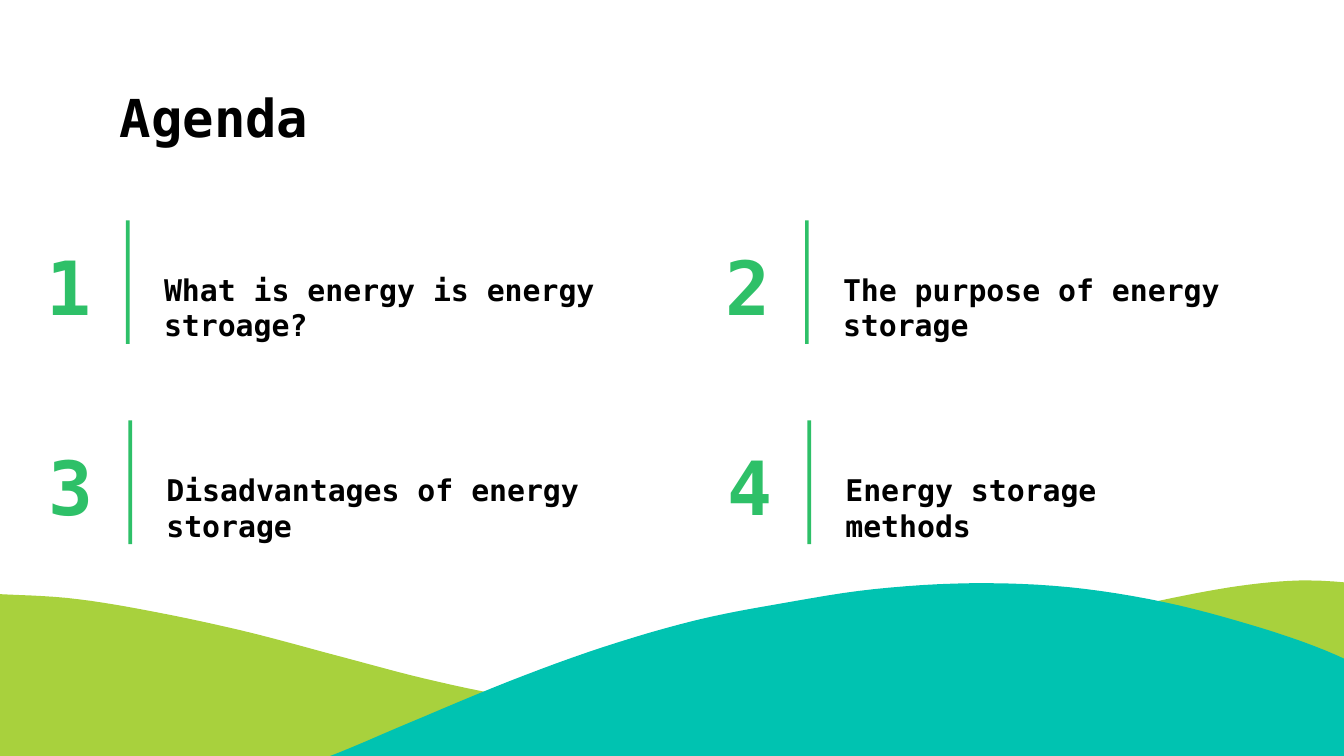
from dataclasses import dataclass

from pptx import Presentation
from pptx.dml.color import RGBColor
from pptx.enum.shapes import MSO_SHAPE
from pptx.enum.text import MSO_ANCHOR, MSO_AUTO_SIZE, PP_ALIGN
from pptx.util import Pt

RECTANGLE = MSO_SHAPE.RECTANGLE
TOP, MIDDLE, BOTTOM = MSO_ANCHOR.TOP, MSO_ANCHOR.MIDDLE, MSO_ANCHOR.BOTTOM
LEFT, RIGHT = PP_ALIGN.LEFT, PP_ALIGN.RIGHT
NO_AUTOFIT = MSO_AUTO_SIZE.NONE


@dataclass(frozen=True)
class Theme:
    font: str = "DejaVu Sans Mono"
    ink: str = "000000"
    green: str = "2EC068"
    lime: str = "A8D13D"
    teal: str = "00C3B1"
    title_size: int = 28
    number_size: int = 40
    topic_size: int = 16


THEME = Theme()
TITLE = "Agenda"
TOPICS = [
    ("What is energy is energy stroage?", 292),
    ("The purpose of energy storage", 263),
    ("Disadvantages of energy storage", 284),
    ("Energy storage methods", 220),
]
HILLS = [
    (THEME.lime, 445.7, [
        (-3, 318.2), (36, 320.4), (74.2, 326.2), (128.9, 337.7), (183.6, 352.1),
        (227.5, 363.6), (272.2, 373), (316.8, 379.4), (355, 380.9), (398.2, 378.7),
        (445, 370.8), (501.1, 356.4), (555.8, 339.8), (596.9, 327.6), (635, 319),
        (669.6, 313.2), (701.3, 311), (741.6, 313.9)]),
    (THEME.teal, 447.8, [
        (0.7, 431.3), (40.3, 434.9), (81.4, 432), (128.9, 421.2), (174.2, 406.1),
        (218.9, 387.4), (272.9, 365), (322.6, 346.9), (373, 332.3), (420.5, 323),
        (468, 315.7), (520.6, 312.5), (572.4, 314.6), (623.5, 322.6),
        (672.5, 335.5), (710, 348.5), (745.2, 365)]),
]

COLUMN_LEFTS = (67.5, 431.25)
FIRST_ROW, ROW_STEP, ROW_SHIFT = 118, 107.25, 1.25
BAR_WIDTH, BAR_HEIGHT = 2, 66.3
NUMBER_OFFSET, NUMBER_WIDTH = -84.2, 72.7
TOPIC_OFFSET, TOPIC_DROP, TOPIC_HEIGHT = 13.3, 20.2, 26.6
CURVE_STEPS = 6


def place(box, left, top, width, height):
    box.left, box.top, box.width, box.height = map(Pt, (left, top, width, height))


def write(box, text, *, size, color, align=LEFT, anchor=TOP, space_after=0):
    frame = box.text_frame
    frame.word_wrap = True
    frame.auto_size = NO_AUTOFIT
    frame.vertical_anchor = anchor
    frame.margin_left = frame.margin_right = Pt(7.2)
    frame.margin_top = frame.margin_bottom = Pt(7.2)
    para = frame.paragraphs[0]
    para.alignment = align
    para.line_spacing = 1.0
    para.space_before = Pt(0)
    para.space_after = Pt(space_after)
    span = para.add_run()
    span.text = text
    span.font.name = THEME.font
    span.font.size = Pt(size)
    span.font.bold = True
    span.font.color.rgb = RGBColor.from_string(color)


def paint(shape, color):
    shape.shadow.inherit = False
    shape.fill.solid()
    shape.fill.fore_color.rgb = RGBColor.from_string(color)
    shape.line.fill.background()


def smooth_curve(knots):
    last = len(knots) - 1
    slopes = []
    for index in range(last + 1):
        x0, y0 = knots[max(index - 1, 0)]
        x1, y1 = knots[min(index + 1, last)]
        slopes.append((y1 - y0) / (x1 - x0))
    points = [knots[0]]
    for index in range(last):
        (x0, y0), (x1, y1) = knots[index:index + 2]
        run = x1 - x0
        for step in range(1, CURVE_STEPS + 1):
            t = step / CURVE_STEPS
            y = ((2 * t**3 - 3 * t**2 + 1) * y0 + (3 * t**2 - 2 * t**3) * y1
                 + (t**3 - 2 * t**2 + t) * run * slopes[index]
                 + (t**3 - t**2) * run * slopes[index + 1])
            points.append((x0 + t * run, y))
    return points


def add_hill(page, color, base, crest):
    outline = smooth_curve(crest) + [(crest[-1][0], base), (crest[0][0], base)]
    points = [(Pt(x), Pt(y)) for x, y in outline]
    builder = page.shapes.build_freeform(*points[0])
    builder.add_line_segments(points[1:], close=True)
    paint(builder.convert_to_shape(), color)


def add_topic(page, index, text, width):
    row, column = divmod(index, len(COLUMN_LEFTS))
    left = COLUMN_LEFTS[column] + row * ROW_SHIFT
    top = FIRST_ROW + row * ROW_STEP
    number = page.shapes.add_textbox(0, 0, 0, 0)
    place(number, left + NUMBER_OFFSET, top, NUMBER_WIDTH, BAR_HEIGHT)
    write(number, str(index + 1), size=THEME.number_size, color=THEME.green,
          align=RIGHT, anchor=BOTTOM)
    topic = page.shapes.add_textbox(0, 0, 0, 0)
    place(topic, left + TOPIC_OFFSET, top + TOPIC_DROP, width, TOPIC_HEIGHT)
    write(topic, text, size=THEME.topic_size, color=THEME.ink, space_after=16)
    bar = page.shapes.add_shape(RECTANGLE, 0, 0, 0, 0)
    place(bar, left, top, BAR_WIDTH, BAR_HEIGHT)
    paint(bar, THEME.green)


def main():
    deck = Presentation()
    deck.slide_width, deck.slide_height = Pt(720), Pt(405)
    page = deck.slides.add_slide(deck.slide_layouts.get_by_name("Title Only"))
    for color, base, crest in HILLS:
        add_hill(page, color, base, crest)
    title = page.shapes.title
    place(title, 57, 42.5, 606, 39.6)
    write(title, TITLE, size=THEME.title_size, color=THEME.ink, anchor=MIDDLE)
    for index, (text, width) in enumerate(TOPICS):
        add_topic(page, index, text, width)
    deck.save("out.pptx")


if __name__ == "__main__":
    main()
